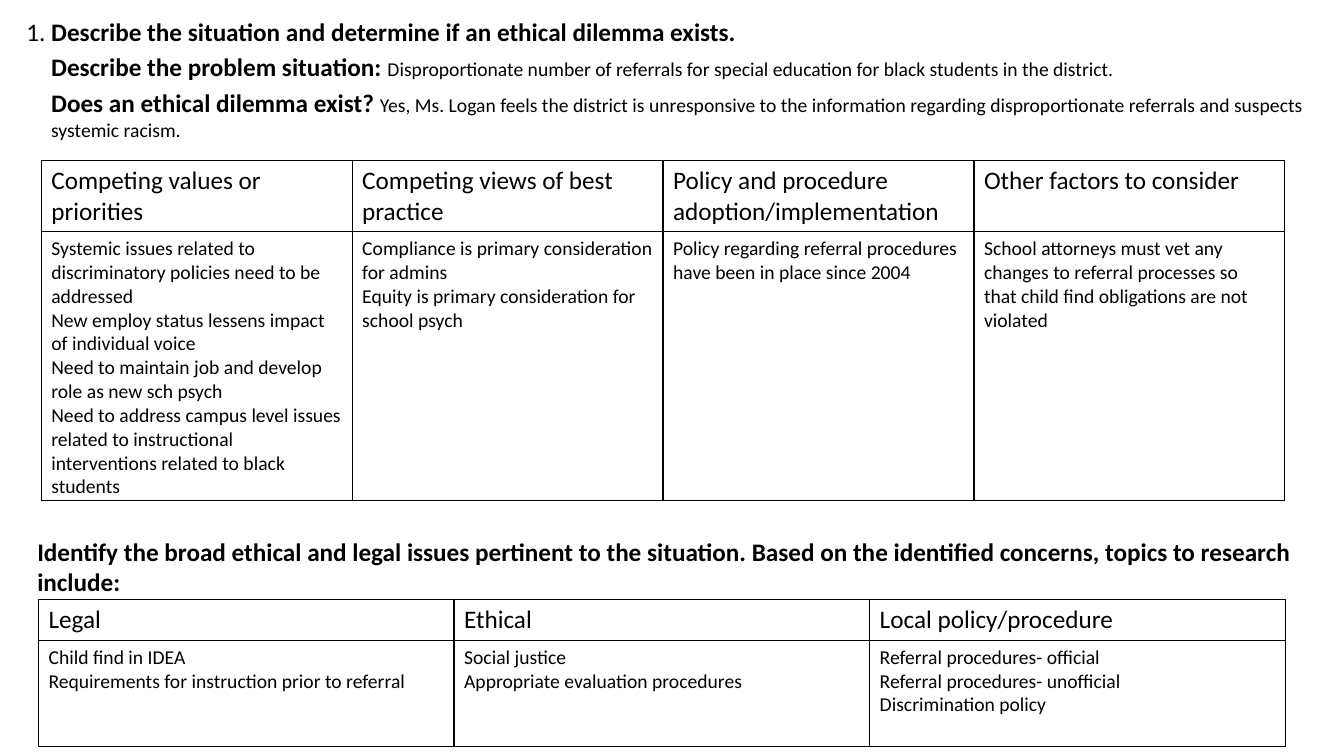
from lxml import etree
from pptx import Presentation
from pptx import util as u
from pptx.dml.color import RGBColor
from pptx.enum import text
from pptx.oxml import ns

COMPETING = [
    ("Competing values or priorities", [
        "Systemic issues related to discriminatory policies need to be addressed",
        "New employ status lessens impact of individual voice",
        "Need to maintain job and develop role as new sch psych",
        "Need to address campus level issues related to instructional "
        "interventions related to black students"]),
    ("Competing views of best practice", [
        "Compliance is primary consideration for admins",
        "Equity is primary consideration for school psych"]),
    ("Policy and procedure adoption/implementation", [
        "Policy regarding referral procedures have been in place since 2004"]),
    ("Other factors to consider", [
        "School attorneys must vet any changes to referral processes so that "
        "child find obligations are not violated"]),
]
TOPICS = [
    ("Legal", ["Child find in IDEA",
               "Requirements for instruction prior to referral"]),
    ("Ethical", ["Social justice", "Appropriate evaluation procedures"]),
    ("Local policy/procedure", ["Referral procedures- official",
                                "Referral procedures- unofficial",
                                "Discrimination policy"]),
]


def color(value):
    return RGBColor.from_string(value)


def add_span(para, words, *, size, bold=False, font="Calibri", ink="000000"):
    span = para.add_run()
    span.text = words
    span.font.size = u.Pt(size)
    span.font.bold = bold
    span.font.name = font
    span.font.color.rgb = color(ink)


class DilemmaPage:
    ink = "000000"
    large, small = 18, 14

    def __init__(self, deck):
        self.page = deck.slides.add_slide(deck.slide_layouts[5])

    def add_spans(self, para, *spans):
        """Add (words, size, bold) spans to a paragraph."""
        for words, size, bold in spans:
            add_span(para, words, size=size, bold=bold, ink=self.ink)

    def title(self, left, top, width, height, *spans):
        box = self.page.shapes.title
        box.left, box.top = u.Cm(left), u.Cm(top)
        box.width, box.height = u.Cm(width), u.Cm(height)
        frame = box.text_frame
        frame.word_wrap = False
        frame.auto_size = text.MSO_AUTO_SIZE.NONE
        frame.vertical_anchor = text.MSO_ANCHOR.TOP
        frame.paragraphs[0].alignment = text.PP_ALIGN.LEFT
        self.add_spans(frame.paragraphs[0], *spans)

    def text_box(self, left, top, width, height, *spans):
        box = self.page.shapes.add_textbox(
            u.Cm(left), u.Cm(top), u.Cm(width), u.Cm(height))
        box.text_frame.word_wrap = True
        self.add_spans(box.text_frame.paragraphs[0], *spans)

    def table(self, left, top, width, heights, columns):
        """Draw a ruled table from (heading, entries) columns."""
        table = self.page.shapes.add_table(
            2, len(columns), u.Cm(left), u.Cm(top),
            u.Cm(width), u.Cm(sum(heights))).table
        table.first_row = table.horz_banding = False
        for row, height in zip(table.rows, heights):
            row.height = u.Cm(height)
        for index, (heading, entries) in enumerate(columns):
            self.fill_cell(table.cell(0, index), [heading], self.large)
            self.fill_cell(table.cell(1, index), entries, self.small)

    def fill_cell(self, cell, entries, size):
        self.rule_cell(cell)
        cell.fill.background()
        frame = cell.text_frame
        for index, entry in enumerate(entries):
            para = frame.add_paragraph() if index else frame.paragraphs[0]
            self.add_spans(para, (entry, size, False))

    def rule_cell(self, cell):
        """Put a one-point line on every side of a cell."""
        properties = cell._tc.get_or_add_tcPr()
        for side in ("lnL", "lnR", "lnT", "lnB"):
            line = etree.SubElement(
                properties, ns.qn(f"a:{side}"), w=str(u.Pt(1)))
            fill = etree.SubElement(line, ns.qn("a:solidFill"))
            etree.SubElement(fill, ns.qn("a:srgbClr"), val=self.ink)


def main():
    deck = Presentation()
    deck.slide_width, deck.slide_height = u.Cm(33.87), u.Cm(19.05)
    sheet = DilemmaPage(deck)
    large, small = sheet.large, sheet.small
    sheet.title(
        0.41, 0.28, 18.54, 1.02, ("1. ", large, False),
        ("Describe the situation and determine if an ethical dilemma exists.",
         large, True))
    sheet.text_box(
        1.04, 1.17, 27.33, 1.03,
        ("Describe the problem situation: ", large, True),
        ("Disproportionate number of referrals for special education for "
         "black students in the district.", small, False))
    sheet.text_box(
        1.04, 2.08, 32.89, 1.65,
        ("Does an ethical dilemma exist? ", large, True),
        ("Yes, Ms. Logan feels the district is unresponsive to the "
         "information regarding disproportionate referrals and suspects "
         "systemic racism.", small, False))
    sheet.table(1.04, 4.04, 31.34, (1.8, 6.76), COMPETING)
    sheet.text_box(
        0.69, 13.39, 32.51, 1.8,
        ("Identify the broad ethical and legal issues pertinent to the "
         "situation. Based on the identified concerns, topics to research "
         "include:", large, True))
    sheet.table(0.97, 15.11, 31.42, (1.03, 2.67), TOPICS)
    deck.save("out.pptx")


if __name__ == "__main__":
    main()
